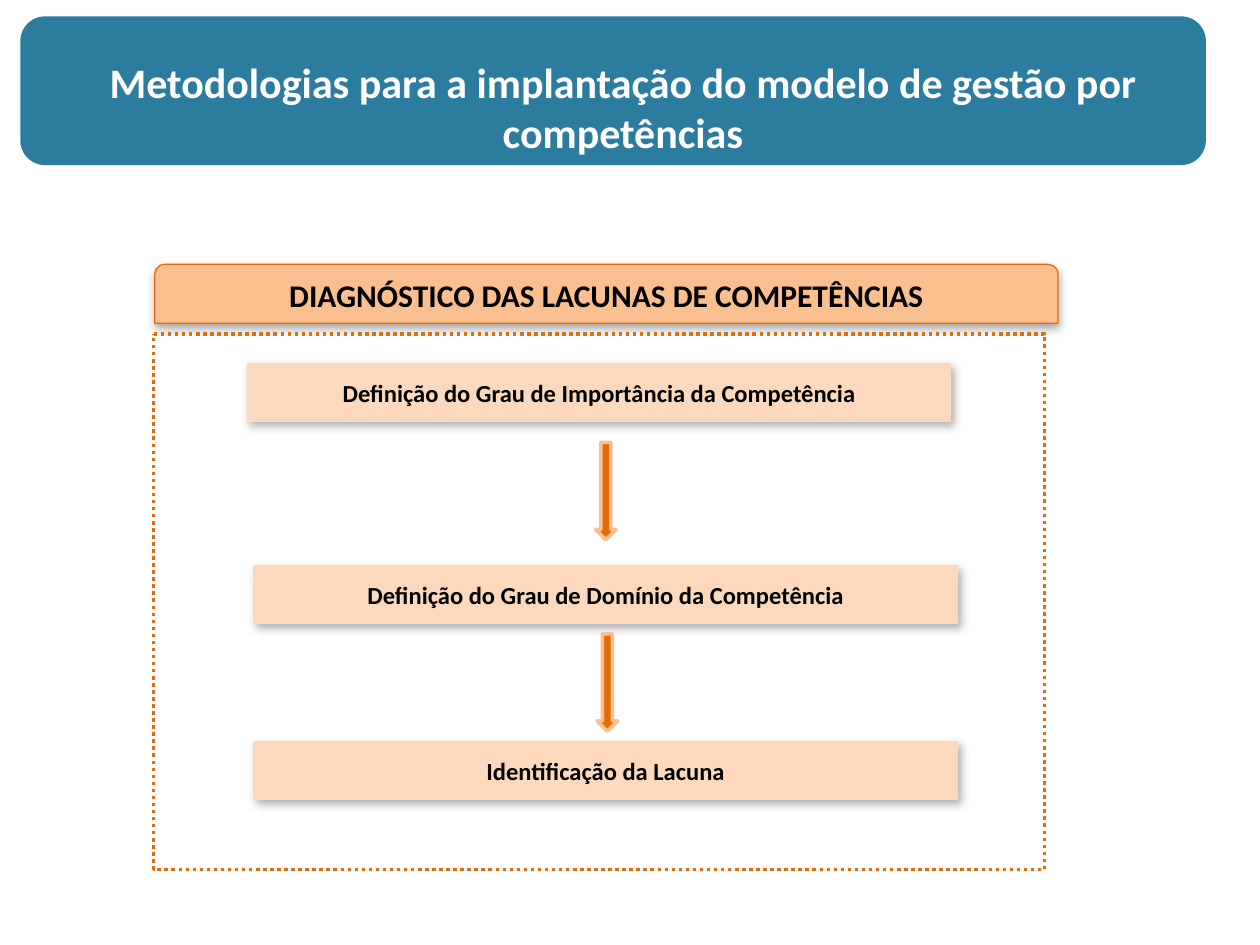
"""Build the slide on diagnosing competency gaps."""
import pptx
import pptx.dml.color
import pptx.enum.dml
import pptx.enum.shapes
import pptx.enum.text
import pptx.oxml
import pptx.oxml.ns
import pptx.util

Cm = pptx.util.Cm
Pt = pptx.util.Pt
RGBColor = pptx.dml.color.RGBColor
SHAPES = pptx.enum.shapes.MSO_SHAPE
ANCHOR = pptx.enum.text.MSO_ANCHOR

TEAL = RGBColor(0x2C, 0x7C, 0x9F)
WHITE = RGBColor(0xFF, 0xFF, 0xFF)
BLACK = RGBColor(0, 0, 0)
ORANGE = RGBColor(0xE3, 0x6C, 0x0A)
APRICOT = RGBColor(0xFA, 0xBF, 0x8F)
PEACH = RGBColor(0xFC, 0xD9, 0xBC)

TITLE = "Metodologias para a implantação do modelo de gestão por competências"
HEADING = "DIAGNÓSTICO DAS LACUNAS DE COMPETÊNCIAS"
STEPS = [
    ("Definição do Grau de Importância da Competência", 4.98, 7.32),
    ("Definição do Grau de Domínio da Competência", 5.11, 11.4),
    ("Identificação da Lacuna", 5.11, 14.94),
]
ARROWS = [(12.01, 8.92), (12.04, 12.78)]
STEP_SIZE = (14.2, 1.19)
ARROW_SIZE = (0.41, 1.96)


def add_box(slide, kind, box, fill=None, line=None, width=0.75):
    shape = slide.shapes.add_shape(kind, *(Cm(length) for length in box))
    shape.shadow.inherit = False
    if fill is None:
        shape.fill.background()
    else:
        shape.fill.solid()
        shape.fill.fore_color.rgb = fill
    if line is None:
        shape.line.fill.background()
    else:
        shape.line.color.rgb = line
        shape.line.width = Pt(width)
    return shape


def set_text(shape, text, size, color, anchor=ANCHOR.MIDDLE):
    frame = shape.text_frame
    frame.text = text
    frame.word_wrap = True
    frame.auto_size = pptx.enum.text.MSO_AUTO_SIZE.NONE
    frame.vertical_anchor = anchor
    paragraph = frame.paragraphs[0]
    paragraph.alignment = pptx.enum.text.PP_ALIGN.CENTER
    paragraph.line_spacing = 1.0
    paragraph.space_before = Pt(0)
    font = paragraph.runs[0].font
    font.name = "Calibri"
    font.size = Pt(size)
    font.bold = True
    font.color.rgb = color


def add_shadow(shape, opacity, distance, angle):
    effects = shape._element.spPr.find(pptx.oxml.ns.qn("a:effectLst"))
    effects.append(pptx.oxml.parse_xml(
        f'<a:outerShdw {pptx.oxml.ns.nsdecls("a")} blurRad="{Pt(5)}" '
        f'dist="{Pt(distance)}" dir="{angle * 60000}" rotWithShape="0">'
        f'<a:srgbClr val="{BLACK}"><a:alpha val="{opacity * 1000}"/>'
        '</a:srgbClr></a:outerShdw>'))


def main():
    presentation = pptx.Presentation()
    presentation.slide_width = Cm(25.4)
    presentation.slide_height = Cm(19.05)
    slide = presentation.slides.add_slide(presentation.slide_layouts[5])

    banner = add_box(slide, SHAPES.FLOWCHART_ALTERNATE_PROCESS,
                     (0.41, 0.33, 23.9, 3), TEAL)
    title = slide.shapes.title
    title.left, title.top, title.width, title.height = (
        Cm(0.81), Cm(0.33), Cm(23.5), Cm(2.97))
    set_text(title, TITLE, 24, WHITE, ANCHOR.BOTTOM)
    banner._element.addnext(title._element)

    heading = add_box(slide, SHAPES.ROUND_2_SAME_RECTANGLE,
                      (3.12, 5.33, 18.21, 1.19), APRICOT, ORANGE)
    set_text(heading, HEADING, 18, BLACK)
    add_shadow(heading, 32, 2.2, 90)

    for text, left, top in STEPS:
        step = add_box(slide, SHAPES.FLOWCHART_PROCESS,
                       (left, top, *STEP_SIZE), PEACH)
        set_text(step, text, 14, BLACK)
        add_shadow(step, 30, 2.6, 53)

    frame = add_box(slide, SHAPES.FLOWCHART_PROCESS,
                    (3.1, 6.73, 17.96, 10.8), line=ORANGE, width=2)
    frame.line.dash_style = pptx.enum.dml.MSO_LINE.ROUND_DOT

    for position in ARROWS:
        add_box(slide, SHAPES.DOWN_ARROW, (*position, *ARROW_SIZE),
                ORANGE, APRICOT, 2)

    presentation.save("out.pptx")


if __name__ == "__main__":
    main()
